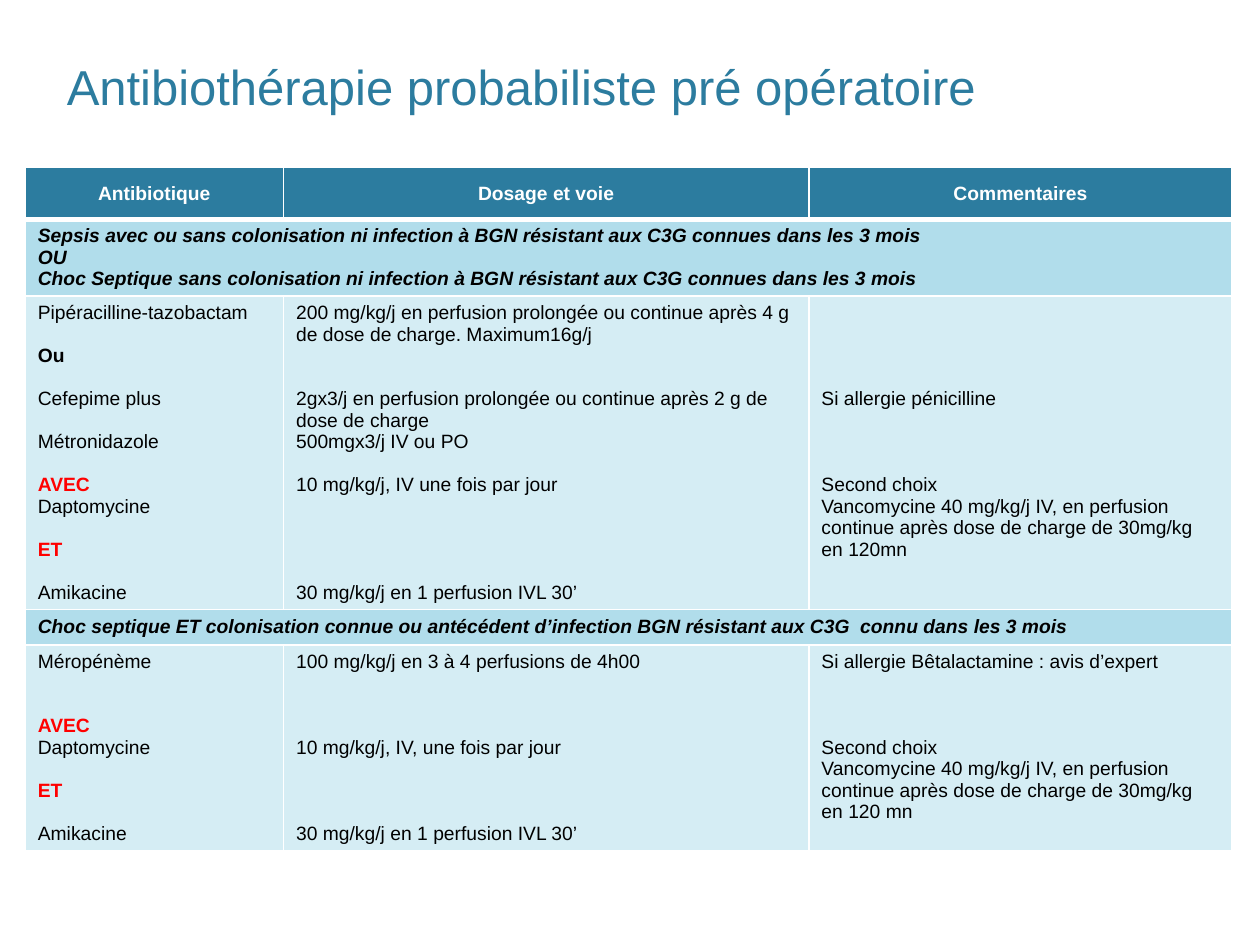
from dataclasses import dataclass

from lxml import etree
from pptx import Presentation
from pptx.dml.color import RGBColor
from pptx.enum.text import MSO_ANCHOR, MSO_AUTO_SIZE, PP_ALIGN
from pptx.oxml.ns import qn
from pptx.util import Emu, Inches, Pt

LEFT, CENTER = PP_ALIGN.LEFT, PP_ALIGN.CENTER
TOP, MIDDLE = MSO_ANCHOR.TOP, MSO_ANCHOR.MIDDLE
NO_AUTOFIT = MSO_AUTO_SIZE.NONE

COLORS = {
    "head": "2C7C9F",
    "band": "B1DDEB",
    "body": "D5EDF4",
    "white": "FFFFFF",
    "black": "000000",
    "red": "FF0000",
}
FONT = "Arial"
TEXT_SIZE = 11
LINE_PT = 12.3
W, H = Inches(10), Inches(7.5)
COL_SHARES = (0.205, 0.417, 0.336)


@dataclass(frozen=True)
class Line:
    text: str
    gap: int = 0
    color: str = "black"
    bold: bool = False
    italic: bool = False


@dataclass(frozen=True)
class Row:
    height: float
    fill: str
    cells: tuple
    align: PP_ALIGN = LEFT
    anchor: MSO_ANCHOR = TOP
    top_pt: int = 1
    bottom_pt: int = 1


def heading(text: str) -> tuple:
    return (Line(text, color="white", bold=True),)


def band(text: str) -> Line:
    return Line(text, bold=True, italic=True)


def link(text: str, gap: int) -> Line:
    return Line(text, gap, "red", True)


ROWS = (
    Row(0.41, "head",
        (heading("Antibiotique"), heading("Dosage et voie"), heading("Commentaires")),
        CENTER, MIDDLE, bottom_pt=3),
    Row(0.6, "band", ((
        band("Sepsis avec ou sans colonisation ni infection à BGN résistant aux C3G connues dans les 3 mois"),
        band("OU"),
        band("Choc Septique sans colonisation ni infection à BGN résistant aux C3G connues dans les 3 mois"),
    ),), top_pt=3),
    Row(2.48, "body", (
        (Line("Pipéracilline-tazobactam"),
         Line("Ou", 1, bold=True),
         Line("Cefepime plus", 1),
         Line("Métronidazole", 1),
         link("AVEC", 1),
         Line("Daptomycine"),
         link("ET", 1),
         Line("Amikacine", 1)),
        (Line("200 mg/kg/j en perfusion prolongée ou continue après 4 g de dose de charge. Maximum16g/j"),
         Line("2gx3/j en perfusion prolongée ou continue après 2 g de dose de charge", 2),
         Line("500mgx3/j IV ou PO"),
         Line("10 mg/kg/j, IV une fois par jour", 1),
         Line("30 mg/kg/j en 1 perfusion IVL 30’", 4)),
        (Line("Si allergie pénicilline", 4),
         Line("Second choix", 3),
         Line("Vancomycine 40 mg/kg/j IV, en perfusion continue après dose de charge de 30mg/kg en 120mn")),
    )),
    Row(0.28, "band", ((
        band("Choc septique ET colonisation connue ou antécédent d’infection BGN résistant aux C3G  connu dans les 3 mois"),
    ),)),
    Row(1.63, "body", (
        (Line("Méropénème"),
         link("AVEC", 2),
         Line("Daptomycine"),
         link("ET", 1),
         Line("Amikacine", 1)),
        (Line("100 mg/kg/j en 3 à 4 perfusions de 4h00"),
         Line("10 mg/kg/j, IV, une fois par jour", 3),
         Line("30 mg/kg/j en 1 perfusion IVL 30’", 3)),
        (Line("Si allergie Bêtalactamine : avis d’expert"),
         Line("Second choix", 3),
         Line("Vancomycine 40 mg/kg/j IV, en perfusion continue après dose de charge de 30mg/kg en 120 mn")),
    )),
)


def rgb(name: str) -> RGBColor:
    return RGBColor.from_string(COLORS[name])


def set_borders(cell, top_pt: int, bottom_pt: int) -> None:
    tc_pr = cell._tc.get_or_add_tcPr()
    for tag, width in (("lnL", 1), ("lnR", 1), ("lnT", top_pt), ("lnB", bottom_pt)):
        ln = etree.SubElement(tc_pr, qn(f"a:{tag}"), w=str(Pt(width)))
        fill = etree.SubElement(ln, qn("a:solidFill"))
        etree.SubElement(fill, qn("a:srgbClr"), val=COLORS["white"])


def write_cell(cell, lines: tuple, row: Row) -> None:
    cell.vertical_anchor = row.anchor
    cell.margin_top = Inches(0.05) + Pt(lines[0].gap * LINE_PT)
    tf = cell.text_frame
    tf.text = "\n".join(line.text for line in lines)
    for i, (p, line) in enumerate(zip(tf.paragraphs, lines)):
        p.alignment = row.align
        if i and line.gap:
            p.space_before = Pt(line.gap * LINE_PT)
        font = p.runs[0].font
        font.name, font.size = FONT, Pt(TEXT_SIZE)
        font.bold, font.italic = line.bold, line.italic
        font.color.rgb = rgb(line.color)


def add_title(s, text: str) -> None:
    title = s.shapes.title
    title.left, title.top = Emu(int(W * 0.043)), Emu(int(H * 0.047))
    title.width, title.height = Emu(int(W * 0.842)), Emu(int(H * 0.096))
    tf = title.text_frame
    tf.text = text
    tf.word_wrap = True
    tf.auto_size = NO_AUTOFIT
    tf.vertical_anchor = MIDDLE
    p = tf.paragraphs[0]
    p.alignment = LEFT
    p.line_spacing = 0.9
    font = p.runs[0].font
    font.name, font.size = FONT, Pt(28)
    font.color.rgb = rgb("head")


def add_treatment_table(s) -> None:
    widths = [int(W * share) for share in COL_SHARES]
    heights = [Inches(row.height) for row in ROWS]
    frame = s.shapes.add_table(len(ROWS), len(widths), Emu(int(W * 0.02)), Inches(1.33),
                               Emu(sum(widths)), Emu(sum(heights)))
    table = frame.table
    table.horz_banding = False
    for column, width in zip(table.columns, widths):
        column.width = Emu(width)
    for r, row in enumerate(ROWS):
        table.rows[r].height = heights[r]
        for c in range(len(widths)):
            cell = table.cell(r, c)
            set_borders(cell, row.top_pt, row.bottom_pt)
            cell.fill.solid()
            cell.fill.fore_color.rgb = rgb(row.fill)
        if len(row.cells) == 1:
            table.cell(r, 0).merge(table.cell(r, len(widths) - 1))
        for c, lines in enumerate(row.cells):
            write_cell(table.cell(r, c), lines, row)


def main() -> None:
    prs = Presentation()
    prs.slide_width, prs.slide_height = W, H
    s = prs.slides.add_slide(prs.slide_layouts[5])
    add_title(s, "Antibiothérapie probabiliste pré opératoire")
    add_treatment_table(s)
    prs.save("out.pptx")


if __name__ == "__main__":
    main()
